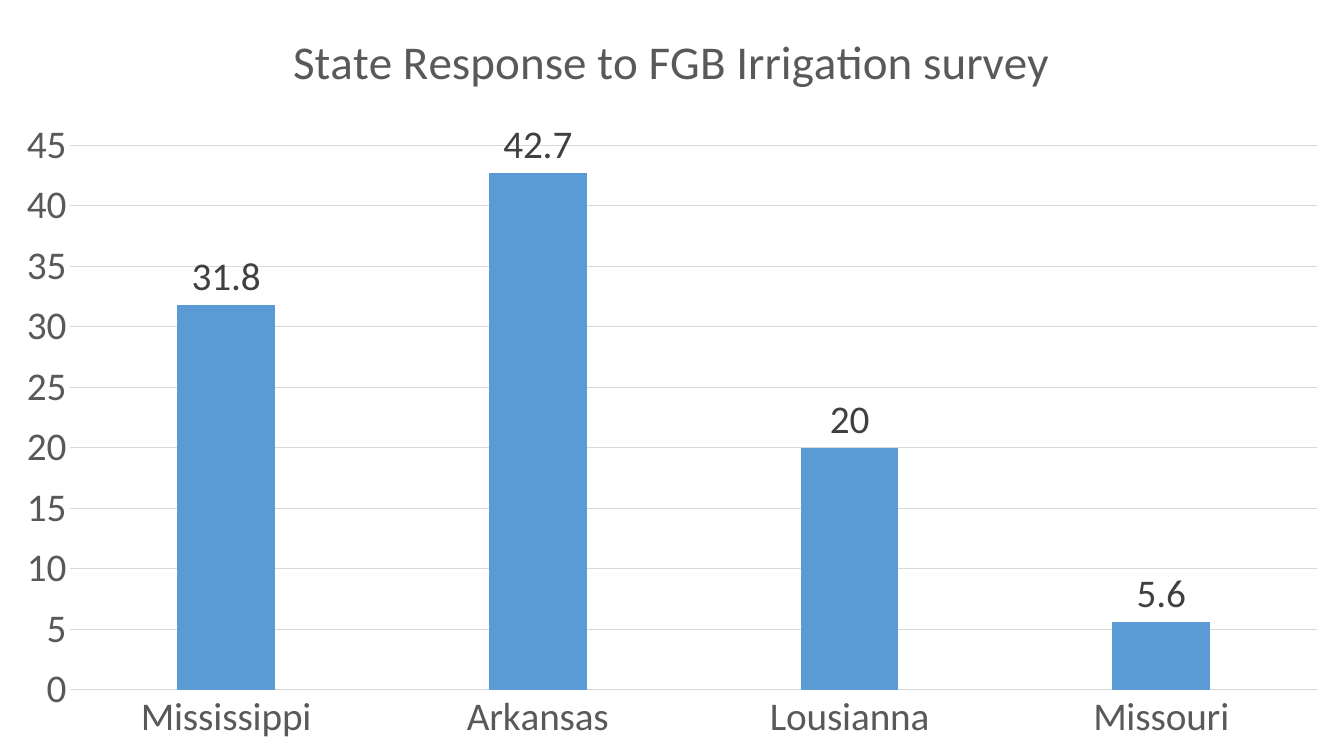
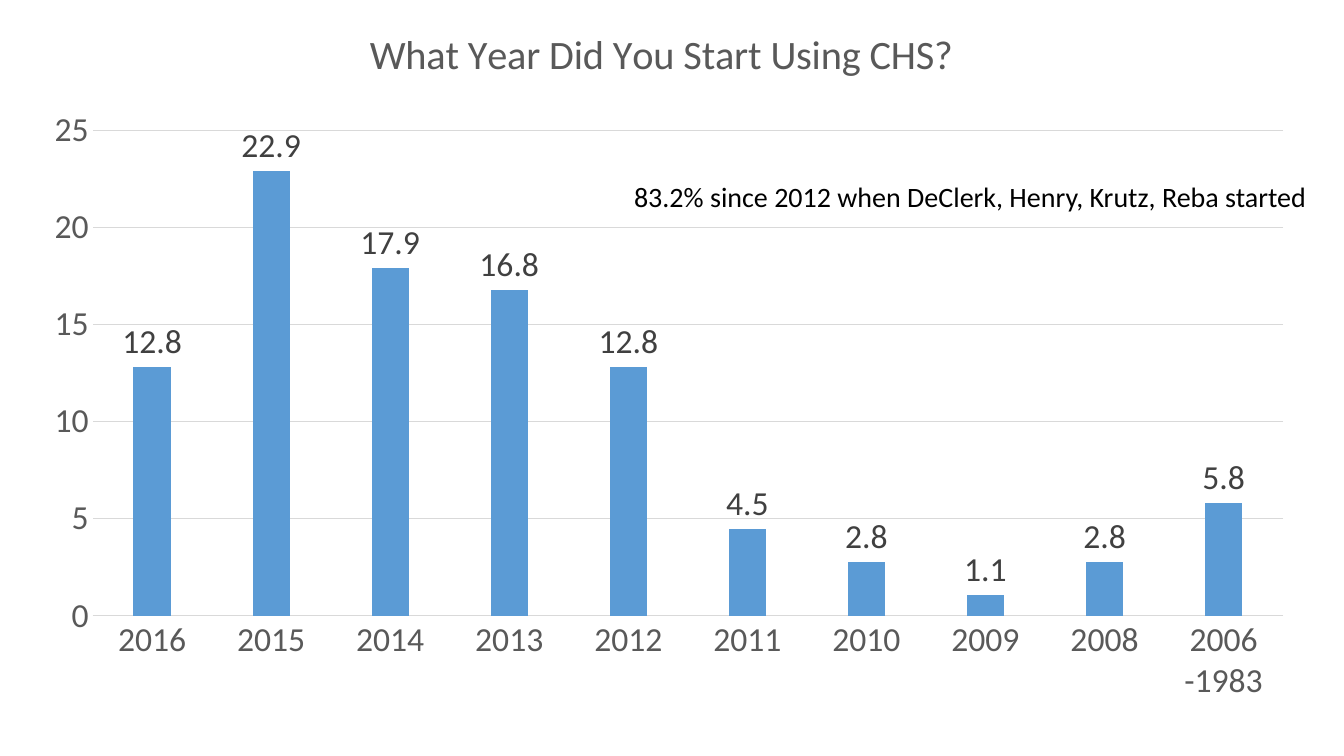
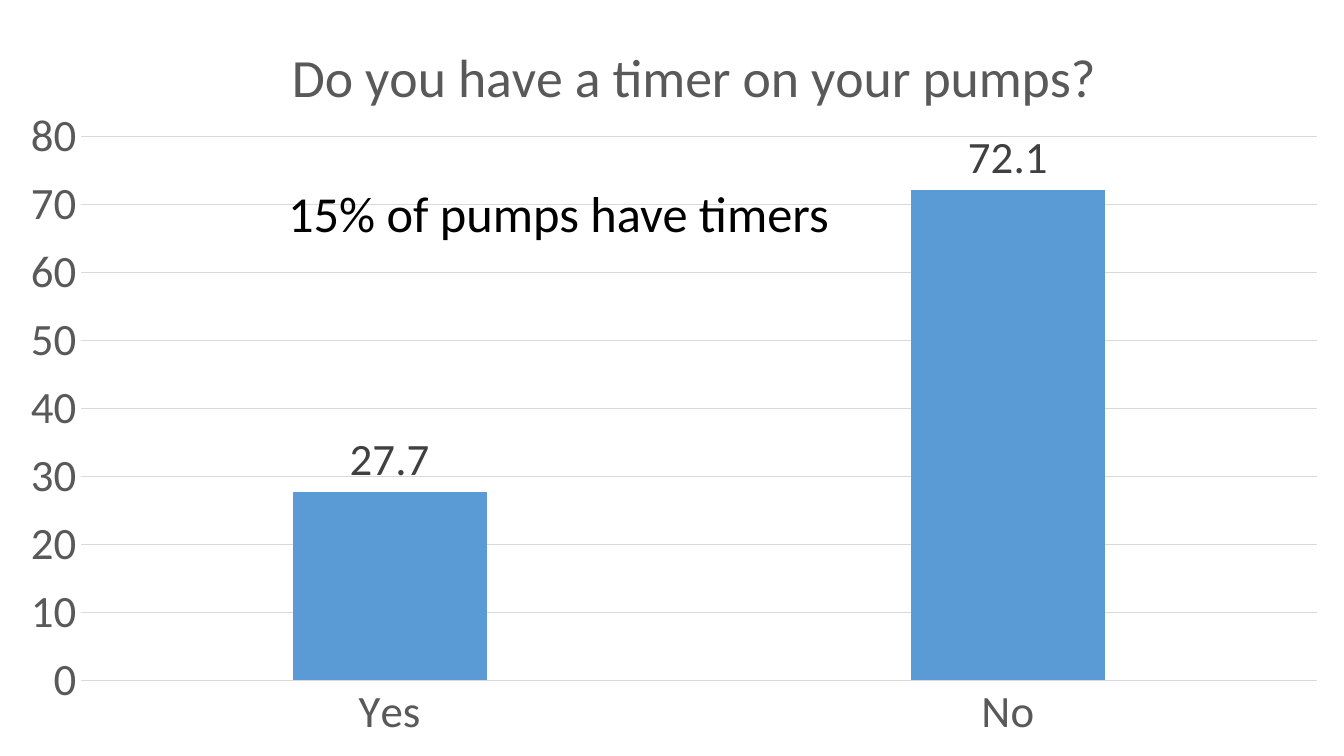
from dataclasses import dataclass
from typing import Optional

from lxml import etree
from pptx import Presentation
from pptx.chart.data import CategoryChartData
from pptx.dml.color import RGBColor
from pptx.enum.chart import XL_CHART_TYPE, XL_LABEL_POSITION, XL_TICK_MARK
from pptx.enum.text import MSO_AUTO_SIZE
from pptx.oxml.ns import qn
from pptx.util import Inches, Pt

COLUMNS = XL_CHART_TYPE.COLUMN_CLUSTERED
ABOVE_BAR = XL_LABEL_POSITION.OUTSIDE_END
NO_TICK = XL_TICK_MARK.NONE
GROW = MSO_AUTO_SIZE.SHAPE_TO_FIT_TEXT

BLACK = RGBColor(0x00, 0x00, 0x00)
DARK_GREY = RGBColor(0x40, 0x40, 0x40)
GREY = RGBColor(0x59, 0x59, 0x59)
LIGHT_GREY = RGBColor(0xD9, 0xD9, 0xD9)
BLUE = RGBColor(0x5B, 0x9B, 0xD5)

FONT = "Calibri"
SLIDE_W, SLIDE_H = 13.33, 7.5
BLANK_LAYOUT = 6
TITLE_SCALE = 1.2  # chart title size relative to the other chart text


@dataclass
class Note:
    text: str
    size: int
    box: tuple[float, float, float, float]


@dataclass
class SurveyChart:
    title: str
    answers: dict[str, float]
    size: int
    axis_max: int
    axis_step: int
    width: float = SLIDE_W
    height: float = SLIDE_H
    plot: Optional[tuple[float, float, float, float]] = None
    title_at: Optional[tuple[float, float]] = None
    note: Optional[Note] = None


SURVEY = [
    SurveyChart(
        "State Response to FGB Irrigation survey",
        {"Mississippi": 31.8, "Arkansas": 42.7, "Lousianna": 20, "Missouri": 5.6},
        size=28, axis_max=45, axis_step=5),
    SurveyChart(
        "What Year Did You Start Using CHS?",
        {"2016": 12.8, "2015": 22.9, "2014": 17.9, "2013": 16.8, "2012": 12.8,
         "2011": 4.5, "2010": 2.8, "2009": 1.1, "2008": 2.8, "2006 -1983": 5.8},
        size=24, axis_max=25, axis_step=5, width=13.12, height=7.19,
        plot=(0.07, 0.18, 0.9, 0.67),
        note=Note("83.2% since 2012 when DeClerk, Henry, Krutz, Reba started",
                  20, (6.19, 1.73, 6.93, 0.44))),
    SurveyChart(
        "Do you have a timer on your pumps?",
        {"Yes": 27.7, "No": 72.1},
        size=32, axis_max=80, axis_step=10,
        plot=(0.06, 0.18, 0.92, 0.72), title_at=(0.21, 0.04),
        note=Note("15% of pumps have timers", 36, (2.76, 1.76, 5.62, 0.71))),
]


def set_font(font, size: float, color: RGBColor) -> None:
    for name, value in {"name": FONT, "size": Pt(size), "bold": False}.items():
        setattr(font, name, value)
    font.color.rgb = color


def set_line(line) -> None:
    line.color.rgb = LIGHT_GREY
    line.width = Pt(0.75)


def set_layout(part, index: int, fractions: tuple[float, ...],
               inner: bool = False) -> None:
    """Place a chart part by fractions of the chart's size."""
    for old in part.findall(qn("c:layout")):
        part.remove(old)
    layout = etree.Element(qn("c:layout"))
    manual = etree.SubElement(layout, qn("c:manualLayout"))
    settings = {"layoutTarget": "inner"} if inner else {}
    settings.update(xMode="edge", yMode="edge")
    settings.update(zip("xywh", fractions))
    for tag, value in settings.items():
        etree.SubElement(manual, qn(f"c:{tag}")).set("val", str(value))
    part.insert(index, layout)


def add_survey_chart(s, survey: SurveyChart) -> None:
    data = CategoryChartData()
    data.categories = list(survey.answers)
    data.add_series("Series 1", list(survey.answers.values()))
    chart = s.shapes.add_chart(COLUMNS, 0, 0, Inches(survey.width),
                               Inches(survey.height), data).chart
    set_font(chart.font, survey.size, BLACK)
    chart.has_legend = False

    # Title
    title = chart.chart_title
    tf = title.text_frame
    tf.text = survey.title
    set_font(tf.paragraphs[0].runs[0].font, survey.size * TITLE_SCALE, GREY)
    title.include_in_layout = False
    if survey.title_at:
        set_layout(title._element, 1, survey.title_at)

    # Axes
    for axis in (chart.category_axis, chart.value_axis):
        axis.major_tick_mark = axis.minor_tick_mark = NO_TICK
        set_font(axis.tick_labels.font, survey.size, GREY)
    set_line(chart.category_axis.format.line)
    value_axis = chart.value_axis
    scale = {"minimum_scale": 0, "maximum_scale": survey.axis_max,
             "major_unit": survey.axis_step, "has_major_gridlines": True}
    for name, value in scale.items():
        setattr(value_axis, name, value)
    value_axis.format.line.fill.background()
    set_line(value_axis.major_gridlines.format.line)

    # Columns and their values
    plot = chart.plots[0]
    columns = {"gap_width": 219, "overlap": -27, "vary_by_categories": False,
               "has_data_labels": True}
    for name, value in columns.items():
        setattr(plot, name, value)
    fill = plot.series[0].format.fill
    fill.solid()
    fill.fore_color.rgb = BLUE
    labels = plot.data_labels
    labels.show_value = True
    labels.position = ABOVE_BAR
    set_font(labels.font, survey.size, DARK_GREY)
    if survey.plot:
        set_layout(plot._element.getparent(), 0, survey.plot, inner=True)


def add_note(s, note: Note) -> None:
    tf = s.shapes.add_textbox(*map(Inches, note.box)).text_frame
    tf.word_wrap = False
    tf.auto_size = GROW
    r = tf.paragraphs[0].add_run()
    r.text = note.text
    set_font(r.font, note.size, BLACK)


def main() -> None:
    prs = Presentation()
    prs.slide_width, prs.slide_height = Inches(SLIDE_W), Inches(SLIDE_H)
    for survey in SURVEY:
        s = prs.slides.add_slide(prs.slide_layouts[BLANK_LAYOUT])
        add_survey_chart(s, survey)
        if survey.note:
            add_note(s, survey.note)
    prs.save("out.pptx")


if __name__ == "__main__":
    main()
